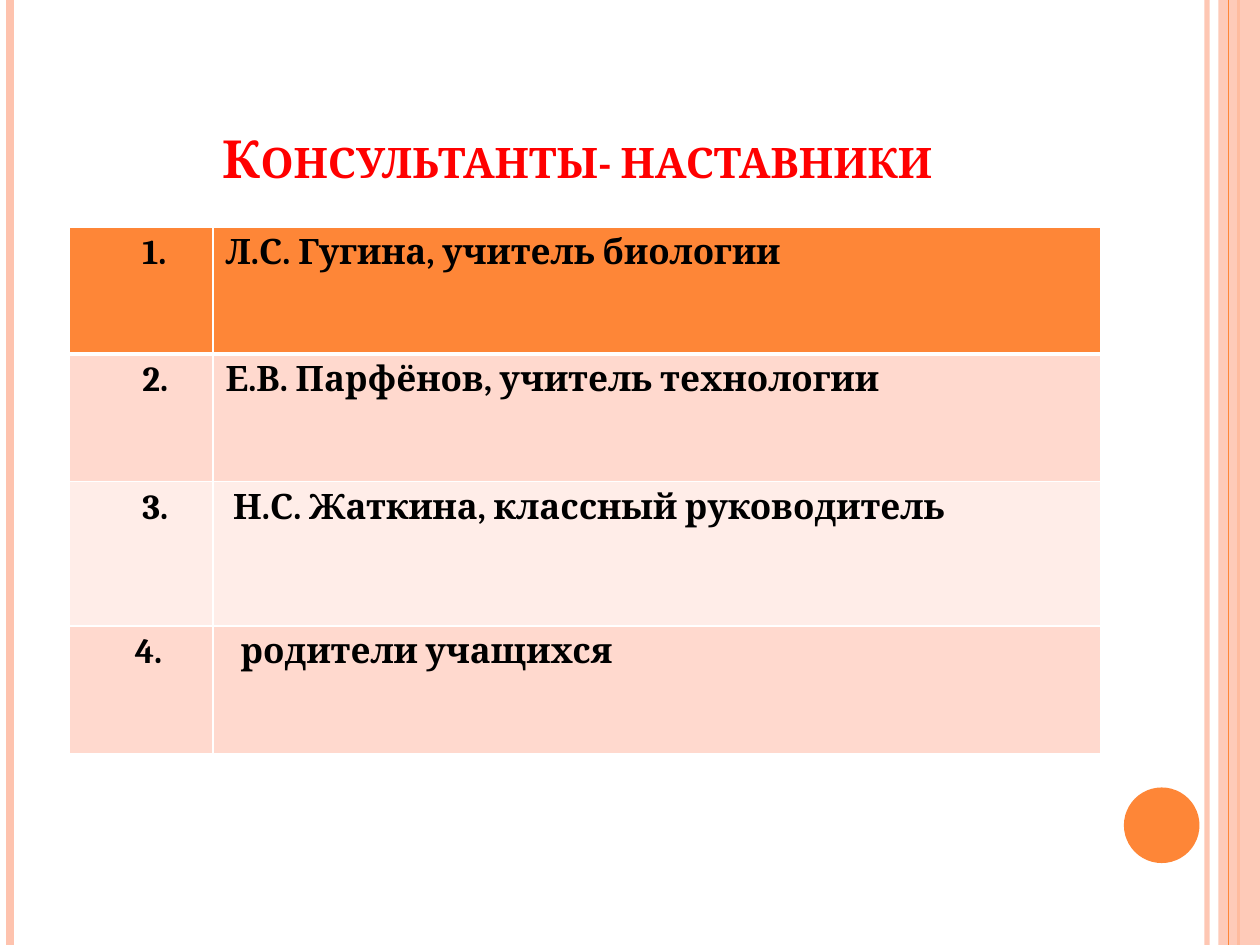
import pptx
import pptx.dml.color
import pptx.enum.shapes
import pptx.enum.text
import pptx.oxml
import pptx.oxml.ns
import pptx.util
from pptx.util import Inches

ORANGE, PEACH, WHITE = "FE8637", "FEC3AE", "FFFFFF"
HEIGHT = 7.5
SHAPE = pptx.enum.shapes.MSO_SHAPE

# number, its left margin, mentor, its left margin, row height, fill
MENTORS = [
    ("1.", 0.58, "Л.С. Гугина, учитель биологии", 0.1, 1.01, ORANGE),
    ("2.", 0.58, "Е.В. Парфёнов, учитель технологии", 0.1, 1.01, "FFD9CE"),
    ("3.", 0.58, "Н.С. Жаткина, классный руководитель", 0.16, 1.15, "FFEDE8"),
    ("4.", 0.52, "родители учащихся", 0.22, 1.01, "FFD9CE"),
]


def rgb(hex_color):
    return pptx.dml.color.RGBColor.from_string(hex_color)


def add_element(parent, tag, **attributes):
    element = pptx.oxml.ns.qn(tag)
    child = parent.makeelement(element, attributes)
    parent.append(child)
    return child


def set_alpha(fill_parent, percent):
    """Make the solid fill inside the given element partly transparent."""
    color = fill_parent.find(".//" + pptx.oxml.ns.qn("a:srgbClr"))
    add_element(color, "a:alpha", val=str(percent * 1000))


def add_stripe(slide, x, color, width, alpha=None):
    """Draw a vertical line over the full slide height."""
    s = slide.shapes.add_connector(
        pptx.enum.shapes.MSO_CONNECTOR.STRAIGHT,
        Inches(x), 0, Inches(x), Inches(HEIGHT))
    s.line.color.rgb = rgb(color)
    s.line.width = pptx.util.Pt(width)
    if alpha:
        set_alpha(s._element.spPr, alpha)
    add_element(s._element.spPr, "a:effectLst")


def add_plain_shape(slide, kind, box, color, alpha=None):
    s = slide.shapes.add_shape(kind, *map(Inches, box))
    s.shadow.inherit = False
    s.fill.solid()
    s.fill.fore_color.rgb = rgb(color)
    s.line.fill.background()
    if alpha:
        set_alpha(s._element.spPr, alpha)


def add_run(p, text, size, color):
    r = p.add_run()
    r.text = text
    r.font.name = "Cambria"
    r.font.size = pptx.util.Pt(size)
    r.font.bold = True
    r.font.color.rgb = rgb(color)
    return r


def add_title(slide, text):
    tf = slide.shapes.add_textbox(
        Inches(0.5), Inches(0.3), Inches(8.17), Inches(1.25)).text_frame
    tf.word_wrap = True
    tf.vertical_anchor = pptx.enum.text.MSO_ANCHOR.BOTTOM
    p = tf.paragraphs[0]
    p.alignment = pptx.enum.text.PP_ALIGN.CENTER
    r = add_run(p, text, 30, "FF0000")
    r._r.get_or_add_rPr().set("cap", "small")


def set_borders(cell, bottom, top):
    tcPr = cell._tc.get_or_add_tcPr()
    for side, width in (("L", 1), ("R", 1), ("T", top), ("B", bottom)):
        ln = add_element(tcPr, "a:ln" + side, w=str(pptx.util.Pt(width)))
        fill = add_element(ln, "a:solidFill")
        add_element(fill, "a:srgbClr", val=WHITE)


def fill_cell(cell, text, margin, color, bottom, top):
    set_borders(cell, bottom, top)
    cell.fill.solid()
    cell.fill.fore_color.rgb = rgb(color)
    cell.margin_left = Inches(margin)
    add_run(cell.text_frame.paragraphs[0], text, 20, "000000")


def add_mentor_table(slide):
    table = slide.shapes.add_table(
        len(MENTORS), 2, Inches(0.55), Inches(1.8),
        Inches(8.19), Inches(4.18)).table
    table.first_row = table.horz_banding = False
    table.columns[0].width = Inches(1.14)
    table.columns[1].width = Inches(7.05)
    for i, (number, indent, mentor, margin, height, color) in enumerate(MENTORS):
        table.rows[i].height = Inches(height)
        bottom = 3 if i == 0 else 1
        top = 3 if i == 1 else 1
        fill_cell(table.cell(i, 0), number, indent, color, bottom, top)
        fill_cell(table.cell(i, 1), mentor, margin, color, bottom, top)


def add_decoration(slide):
    add_stripe(slide, 9.58, PEACH, 3, alpha=93)
    add_stripe(slide, 0.08, PEACH, 4.5)
    add_stripe(slide, 9.83, ORANGE, 1.5)
    add_plain_shape(slide, SHAPE.RECTANGLE, (9.67, 0, 0.33, HEIGHT), PEACH, alpha=87)
    add_stripe(slide, 9.75, ORANGE, 0.75)
    add_plain_shape(slide, SHAPE.OVAL, (8.92, 6.25, 0.6, 0.6), ORANGE)


def main():
    prs = pptx.Presentation()
    prs.slide_width, prs.slide_height = Inches(10), Inches(HEIGHT)
    slide = prs.slides.add_slide(prs.slide_layouts[6])
    slide.background.fill.solid()
    slide.background.fill.fore_color.rgb = rgb(WHITE)
    add_decoration(slide)
    add_title(slide, "Консультанты- наставники")
    add_mentor_table(slide)
    prs.save("out.pptx")


if __name__ == "__main__":
    main()
